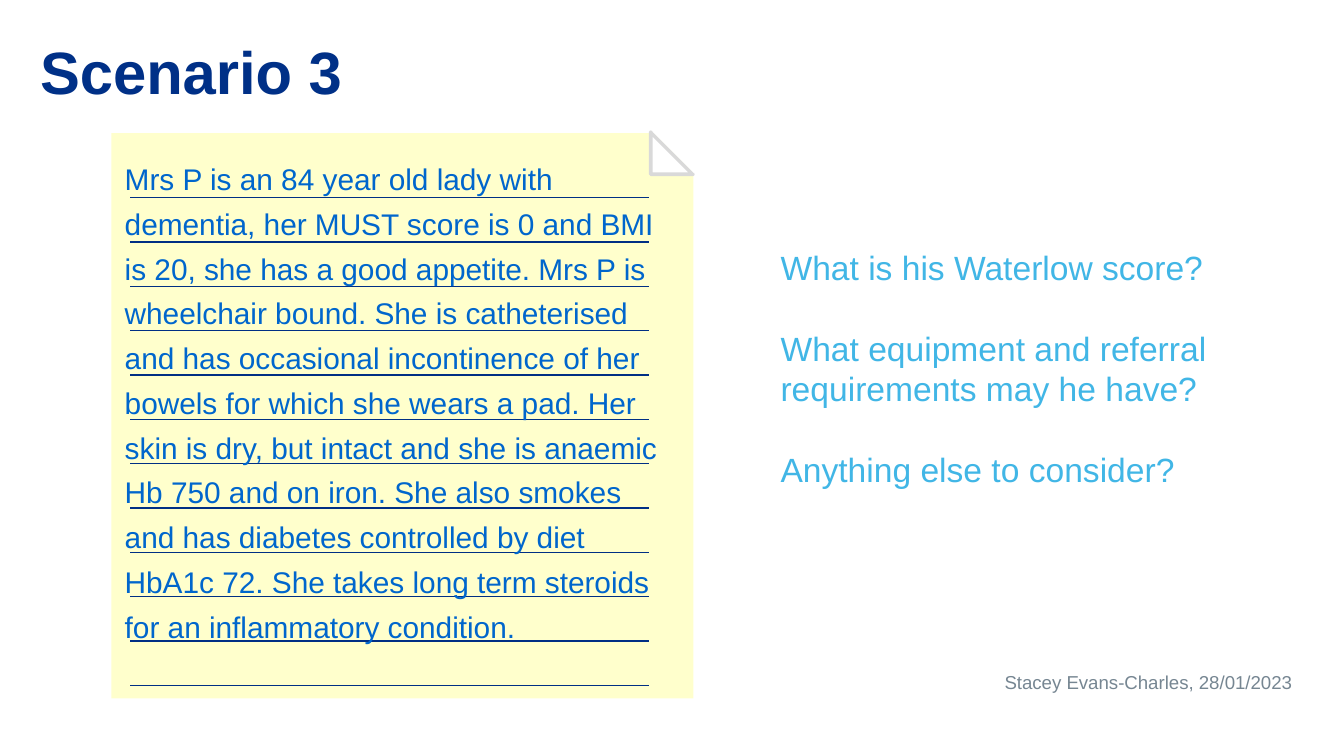
"""Build the Scenario 3 slide with a ruled note and discussion questions."""
from lxml.etree import SubElement
from pptx import Presentation
from pptx.dml.color import RGBColor
from pptx.enum.shapes import MSO_CONNECTOR, MSO_SHAPE
from pptx.enum.text import MSO_AUTO_SIZE, PP_ALIGN
from pptx.oxml.ns import qn
from pptx.util import Pt

TITLE = "Scenario 3"
NOTE = (
    "Mrs P is an 84 year old lady with dementia, her MUST score is 0 and BMI is 20, "
    "she has a good appetite. Mrs P is wheelchair bound. She is catheterised and has "
    "occasional incontinence of her bowels for which she wears a pad. Her skin is dry, "
    "but intact and she is anaemic Hb 750 and on iron. She also smokes and has diabetes "
    "controlled by diet HbA1c 72. She takes long term steroids for an inflammatory condition."
)
QUESTIONS = [
    "What is his Waterlow score?",
    "What equipment and referral requirements may he have?",
    "Anything else to consider?",
]
FOOTER = "Stacey Evans-Charles, 28/01/2023"

RULE_COUNT = 12
RULE_LEFT, RULE_RIGHT = 69.84, 347.76
RULE_TOP, RULE_GAP = 105.84, 23.76


def color(hex_string):
    return RGBColor.from_string(hex_string)


def add_text(slide, box, paragraphs, size, hex_string, bold=False,
             align=PP_ALIGN.LEFT, line_spacing=None, gap=0):
    text_box = slide.shapes.add_textbox(*map(Pt, box))
    text_frame = text_box.text_frame
    text_frame.word_wrap = True
    text_frame.auto_size = MSO_AUTO_SIZE.SHAPE_TO_FIT_TEXT
    text_frame.text = "\n".join(paragraphs)
    for index, paragraph in enumerate(text_frame.paragraphs):
        paragraph.alignment = align
        if line_spacing:
            paragraph.line_spacing = line_spacing
        if index and gap:
            paragraph.space_before = Pt(gap)
        for run in paragraph.runs:
            run.font.name = "Arial"
            run.font.size = Pt(size)
            run.font.bold = bold
            run.font.color.rgb = color(hex_string)


def add_filled(slide, kind, box, fill, line=None, rotation=0):
    shape = slide.shapes.add_shape(kind, *map(Pt, box))
    shape.shadow.inherit = False
    shape.rotation = rotation
    shape.fill.solid()
    shape.fill.fore_color.rgb = color(fill)
    if line:
        shape.line.color.rgb = color(line)
        shape.line.width = Pt(2)
    else:
        shape.line.fill.background()


def add_rule(slide, top):
    rule = slide.shapes.add_connector(
        MSO_CONNECTOR.STRAIGHT, Pt(RULE_LEFT), Pt(top), Pt(RULE_RIGHT), Pt(top))
    rule.line.color.rgb = color("002F84")
    rule.line.width = Pt(0.75)
    SubElement(rule._element.spPr, qn("a:effectLst"))


def main():
    presentation = Presentation()
    presentation.slide_width, presentation.slide_height = Pt(720), Pt(405)
    slide = presentation.slides.add_slide(presentation.slide_layouts[6])

    add_text(slide, (14.4, 15.12, 568.8, 46), [TITLE], 32, "003087", bold=True)
    add_text(slide, (530.64, 355.68, 168.5, 19.4), [FOOTER], 10, "768692",
             align=PP_ALIGN.RIGHT)

    add_filled(slide, MSO_SHAPE.RECTANGLE, (59.76, 71.28, 311.76, 302.9), "FFFFCC")
    add_filled(slide, MSO_SHAPE.RIGHT_TRIANGLE, (348.6, 70.8, 22.6, 22.6), "FFFFFF",
               line="D9D9D9")
    add_filled(slide, MSO_SHAPE.RIGHT_TRIANGLE, (349.4, 70.4, 22.6, 22.6), "FFFFFF",
               rotation=180)
    for index in range(RULE_COUNT):
        add_rule(slide, RULE_TOP + index * RULE_GAP)
    add_text(slide, (59.76, 77.76, 300.24, 271.4), [NOTE], 16, "0066CC",
             line_spacing=1.25)

    add_text(slide, (411.12, 128.88, 254.88, 138.2), QUESTIONS, 18, "41B6E6", gap=21.6)
    presentation.save("out.pptx")


if __name__ == "__main__":
    main()
